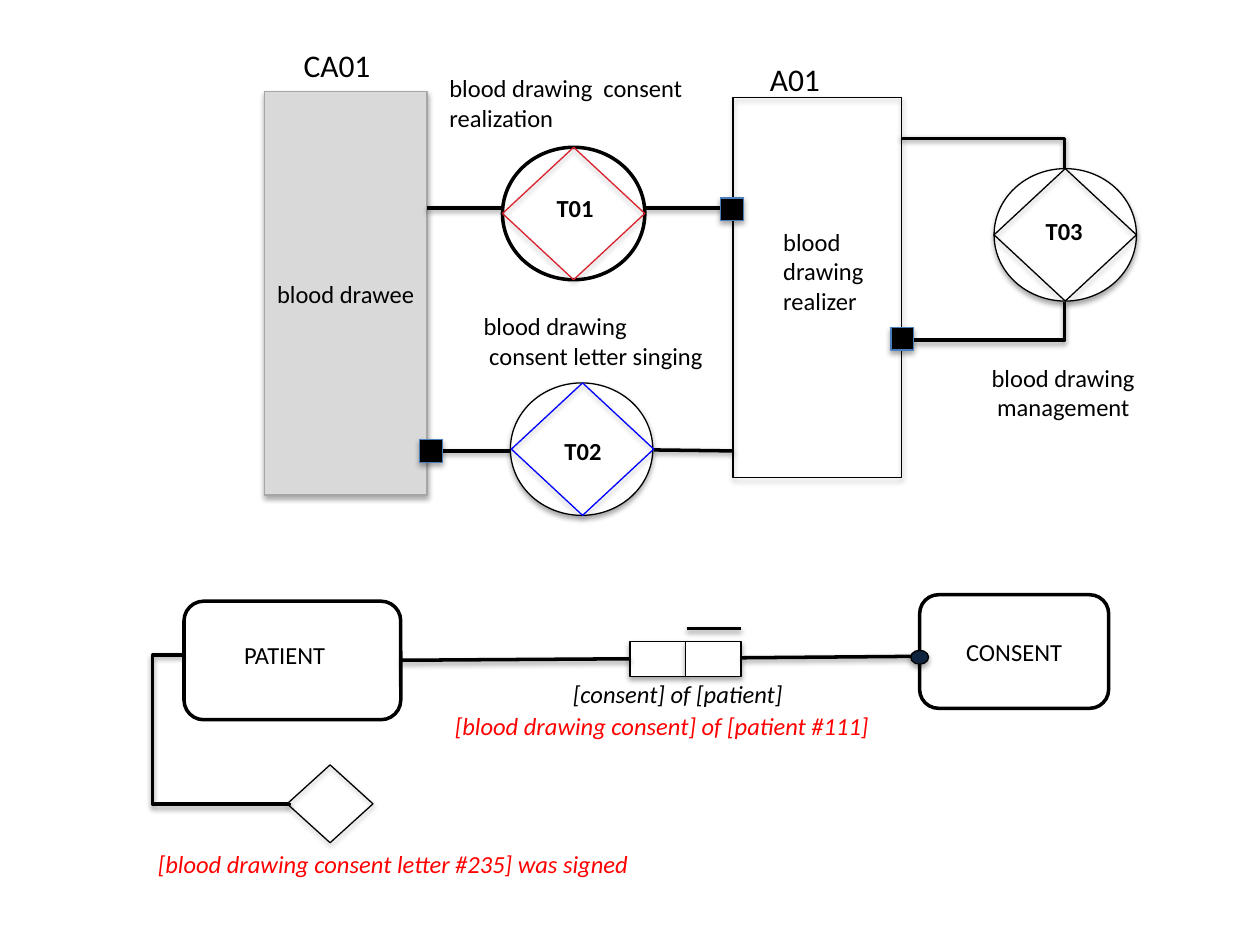
from lxml import etree
from pptx import Presentation
from pptx import util as u
from pptx.dml.color import RGBColor
from pptx.enum import shapes, text
from pptx.oxml import ns

rgb = RGBColor.from_string
G, C = shapes.MSO_SHAPE, shapes.MSO_CONNECTOR
A = text.PP_ALIGN

prs = Presentation()
prs.slide_width, prs.slide_height = u.Cm(25.4), u.Cm(19.05)
s = prs.slides.add_slide(prs.slide_layouts[6])


def finish(sp, color, width, alpha=None, dist=1.8):
    """Outline a shape or connector, with a soft shadow below if alpha is given."""
    sp.line.color.rgb = rgb(color)
    sp.line.width = u.Pt(width)
    fx = etree.SubElement(sp._element.spPr, ns.qn("a:effectLst"))
    if alpha:
        shadow = etree.SubElement(fx, ns.qn("a:outerShdw"), blurRad=str(u.Pt(3.1)),
                                  dist=str(u.Pt(dist)), dir="5400000",
                                  algn="ctr", rotWithShape="0")
        clr = etree.SubElement(shadow, ns.qn("a:srgbClr"), val="000000")
        etree.SubElement(clr, ns.qn("a:alpha"), val=str(alpha * 1000))


def write(tf, lines, align=A.LEFT, color="000000", **fmt):
    for i, line in enumerate(lines):
        p = tf.paragraphs[0] if i == 0 else tf.add_paragraph()
        p.alignment = align
        r = p.add_run()
        r.text = line
        r.font.color.rgb = rgb(color)
        for name, value in {"name": "Calibri", "size": u.Pt(14), **fmt}.items():
            setattr(r.font, name, value)


# Actor boxes, entity boxes and the two fact cells
boxes = [
    (G.RECTANGLE, 5.33, 1.85, 3.28, 8.13, "D9D9D9", "A6A6A6", 0.75, 35, "blood drawee"),
    (G.RECTANGLE, 14.78, 1.96, 3.4, 7.67, None, "000000", 0.75, 35, None),
    (G.FLOWCHART_ALTERNATE_PROCESS, 18.54, 11.99, 3.81, 2.29, "FFFFFF", "000000", 2, None, "CONSENT"),
    (G.FLOWCHART_ALTERNATE_PROCESS, 3.71, 12.12, 4.37, 2.39, "FFFFFF", "000000", 2, None, None),
    (G.RECTANGLE, 12.7, 12.93, 1.12, 0.71, "FFFFFF", "000000", 0.75, 35, None),
    (G.RECTANGLE, 13.82, 12.93, 1.12, 0.71, "FFFFFF", "000000", 0.75, 35, None),
]
# Event diamond, small square ends and the dot on CONSENT
boxes_front = [
    (G.FLOWCHART_DECISION, 5.79, 15.42, 1.73, 1.57, None, "000000", 0.75, 35, None),
    *[(G.RECTANGLE, x, y, 0.46, 0.46, "000000", "4B7EBC", 0.75, 35, None)
      for x, y in [(8.46, 8.86), (14.53, 3.99), (17.96, 6.6)]],
    (G.OVAL, 18.36, 13.11, 0.36, 0.28, "0F243E", "000000", 0.75, 35, None),
]
# Transactions: a circle with a diamond inside
for x, y, dx, color, width, alpha in [(10.13, 2.97, 0, "DA222E", 2, None),
                                      (10.29, 7.72, 0.02, "0000FF", 0.75, 35),
                                      (20.04, 3.4, 0, "000000", 0.75, 35)]:
    boxes_front += [
        (G.OVAL, x, y, 2.87, 2.67, "FFFFFF", "000000", width, alpha, None),
        (G.DIAMOND, x + dx, y, 2.87, 2.67, None, color, 0.75, 35, None),
    ]

# Links: straight, or bent with a preset name
links = [
    (8.61, 4.19, 10.13, 4.19, None),
    (13, 4.19, 14.76, 4.19, None),
    (13.18, 9.07, 14.78, 9.09, None),
    (8.69, 9.09, 10.82, 9.09, None),
    (13.84, 12.67, 14.94, 12.67, None),
    (14.96, 13.26, 18.57, 13.23, None),
    (8.08, 13.31, 12.7, 13.28, None),
    (18.16, 2.79, 21.46, 3.4, "bentConnector2"),
    (18.16, 6.86, 21.46, 6.1, "bentConnector2"),
    (3.71, 13.21, 5.84, 16.18, "bentConnector4"),
]

# Draw boxes, then links, then what sits on top of the links
for layer in (boxes, links, boxes_front):
    if layer is links:
        for x1, y1, x2, y2, bend in links:
            cx = s.shapes.add_connector(C.ELBOW if bend else C.STRAIGHT,
                                        u.Cm(x1), u.Cm(y1), u.Cm(x2), u.Cm(y2))
            finish(cx, "000000", 2, 38, 1.6)
            if bend:
                geom = cx._element.spPr.find(ns.qn("a:prstGeom"))
                geom.set("prst", bend)
            if bend == "bentConnector4":
                xfrm = cx._element.spPr.find(ns.qn("a:xfrm"))
                for name, value in {"rot": "10800000", "flipH": "1", "flipV": "1"}.items():
                    xfrm.set(name, value)
                av = geom.find(ns.qn("a:avLst"))
                if av is None:
                    av = etree.SubElement(geom, ns.qn("a:avLst"))
                for name, value in {"adj1": -29700, "adj2": 101100}.items():
                    etree.SubElement(av, ns.qn("a:gd"), name=name, fmla=f"val {value}")
        continue
    for kind, x, y, w, h, fill, color, width, alpha, label in layer:
        sp = s.shapes.add_shape(kind, u.Cm(x), u.Cm(y), u.Cm(w), u.Cm(h))
        if fill:
            sp.fill.solid()
            sp.fill.fore_color.rgb = rgb(fill)
        else:
            sp.fill.background()
        finish(sp, color, width, alpha)
        if label:
            sp.text_frame.vertical_anchor = text.MSO_ANCHOR.MIDDLE
            write(sp.text_frame, [label], A.CENTER)

# Labels: left, top, width, height, wrap, lines, format
big, bold = {"size": u.Pt(18)}, {"bold": True}
italic = {"italic": True}
red = {"italic": True, "color": "FF0000"}
labels = [
    (5.87, 0.81, 1.88, 1.02, False, ["CA01"], big),
    (15.27, 1.09, 1.52, 1.02, False, ["A01"], big),
    (15.54, 4.45, 2.29, 2.06, True, ["blood", "drawing realizer"], {}),
    (8.81, 1.35, 6.17, 1.45, True, ["blood drawing  consent realization"], {}),
    (10.97, 3.76, 1.27, 0.86, False, ["T01"], bold),
    (11.13, 8.66, 1.27, 0.86, False, ["T02"], bold),
    (20.83, 4.24, 1.27, 0.86, False, ["T03"], bold),
    (19.74, 7.19, 3.43, 1.45, False, ["blood drawing", " management"], {}),
    (9.5, 6.15, 5.08, 1.45, False, ["blood drawing", " consent letter singing"], {}),
    (3.71, 12.78, 4.06, 0.86, True, ["PATIENT"], {"align": A.CENTER}),
    (11.3, 13.56, 5.51, 0.86, True, ["[consent] of [patient]"], italic),
    (8.92, 14.2, 11.43, 0.86, True, ["[blood drawing consent] of [patient #111]"], red),
    (2.82, 16.99, 11.25, 0.86, True, [" [blood drawing consent letter #235] was signed"], red),
]
for x, y, w, h, wrap, lines, fmt in labels:
    tf = s.shapes.add_textbox(u.Cm(x), u.Cm(y), u.Cm(w), u.Cm(h)).text_frame
    tf.word_wrap = wrap
    tf.auto_size = text.MSO_AUTO_SIZE.SHAPE_TO_FIT_TEXT
    write(tf, lines, **fmt)

prs.save("out.pptx")
